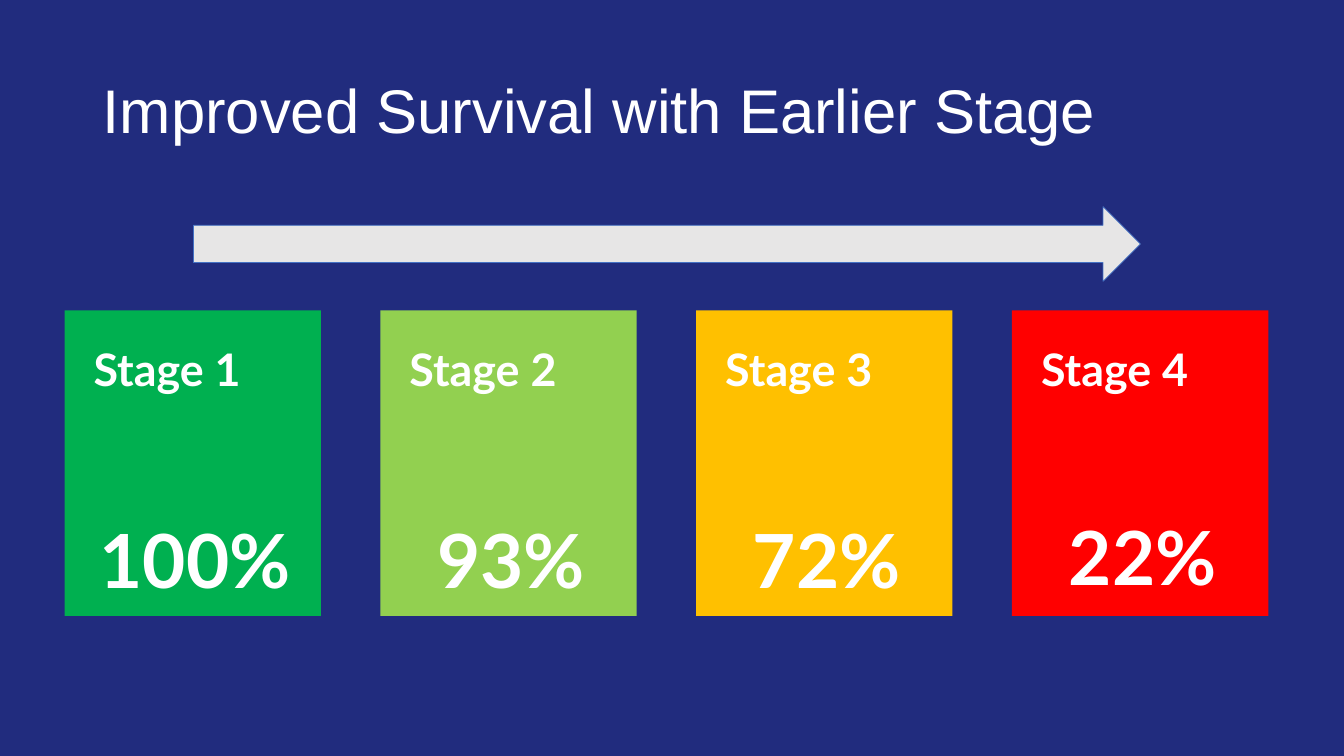
from dataclasses import dataclass

from pptx import Presentation
from pptx.dml.color import RGBColor
from pptx.enum.shapes import MSO_SHAPE
from pptx.enum.text import MSO_ANCHOR, MSO_AUTO_SIZE, PP_ALIGN
from pptx.util import Inches, Pt


@dataclass(frozen=True)
class Theme:
    """Colours, fonts and type sizes of the slide."""
    background: str = "212C7E"
    text: str = "FFFFFF"
    arrow: str = "E7E6E6"
    arrow_line: str = "4472C4"
    title_font: str = "Arial"
    card_font: str = "Lato"
    title_size: float = 44
    stage_size: float = 32
    rate_size: float = 53.3
    rate_spacing: float = 86


THEME = Theme()
STAGES = [
    ("Stage 1", "100%", "00B050", 1.71),
    ("Stage 2", "93%", "92D050", 1.71),
    ("Stage 3", "72%", "FFC000", 1.71),
    ("Stage 4", "22%", "FF0000", 1.68),
]


def add_filled_shape(slide, kind, box, color):
    """Add a flat shape without outline in a box given in inches."""
    shape = slide.shapes.add_shape(kind, *map(Inches, box))
    shape.shadow.inherit = False
    shape.fill.solid()
    shape.fill.fore_color.rgb = RGBColor.from_string(color)
    shape.line.fill.background()
    return shape


def write_text(shape, text, font, size, bold=False, align=PP_ALIGN.LEFT, anchor=MSO_ANCHOR.TOP):
    """Write one formatted paragraph and return it."""
    frame = shape.text_frame
    frame.text = text
    frame.word_wrap = True
    frame.vertical_anchor = anchor
    paragraph = frame.paragraphs[0]
    paragraph.alignment = align
    run = paragraph.runs[0]
    run.font.name = font
    run.font.size = Pt(size)
    run.font.bold = bold
    run.font.color.rgb = RGBColor.from_string(THEME.text)
    return paragraph


def add_title(slide, box, text):
    """Add the slide title."""
    title = slide.shapes.add_textbox(*map(Inches, box))
    paragraph = write_text(title, text, THEME.title_font, THEME.title_size,
                           anchor=MSO_ANCHOR.MIDDLE)
    paragraph.line_spacing = 0.9


def add_progress_arrow(slide, box):
    """Add the arrow that runs from early to late stage."""
    arrow = add_filled_shape(slide, MSO_SHAPE.RIGHT_ARROW, box, THEME.arrow)
    arrow.line.color.rgb = RGBColor.from_string(THEME.arrow_line)
    arrow.line.width = Pt(0.5)


def add_stage_card(slide, box, stage, rate, color, rate_offset):
    """Add a coloured card with a stage name and its survival rate."""
    left, top, width, height = box
    add_filled_shape(slide, MSO_SHAPE.RECTANGLE, box, color)

    rate_box = (left + 0.2, top + rate_offset, 2.19, 1.07)
    rate_shape = add_filled_shape(slide, MSO_SHAPE.RECTANGLE, rate_box, color)
    paragraph = write_text(rate_shape, rate, THEME.card_font, THEME.rate_size,
                           bold=True, align=PP_ALIGN.CENTER)
    paragraph.line_spacing = Pt(THEME.rate_spacing)
    frame = rate_shape.text_frame
    frame.margin_left = frame.margin_right = frame.margin_top = frame.margin_bottom = 0
    frame.auto_size = MSO_AUTO_SIZE.SHAPE_TO_FIT_TEXT

    stage_box = (left + 0.19, top + 0.26, width - 0.4, 0.64)
    stage_shape = add_filled_shape(slide, MSO_SHAPE.RECTANGLE, stage_box, color)
    write_text(stage_shape, stage, THEME.card_font, THEME.stage_size, bold=True)
    stage_shape.text_frame.auto_size = MSO_AUTO_SIZE.SHAPE_TO_FIT_TEXT


def add_stage_row(slide, box, gap):
    """Spread the stage cards evenly over the box."""
    left, top, width, height = box
    card_width = (width - gap * (len(STAGES) - 1)) / len(STAGES)
    for index, stage in enumerate(STAGES):
        card_left = left + index * (card_width + gap)
        add_stage_card(slide, (card_left, top, card_width, height), *stage)


def main():
    """Build and save the presentation."""
    presentation = Presentation()
    presentation.slide_width = Inches(13.33)
    presentation.slide_height = Inches(7.5)
    slide = presentation.slides.add_slide(presentation.slide_layouts[6])
    slide.background.fill.solid()
    slide.background.fill.fore_color.rgb = RGBColor.from_string(THEME.background)
    add_title(slide, (0.92, 0.4, 11.5, 1.45), "Improved Survival with Earlier Stage")
    add_stage_row(slide, (0.64, 3.08, 11.94, 3.03), gap=0.59)
    add_progress_arrow(slide, (1.92, 2.05, 9.39, 0.74))
    presentation.save("out.pptx")


if __name__ == "__main__":
    main()
